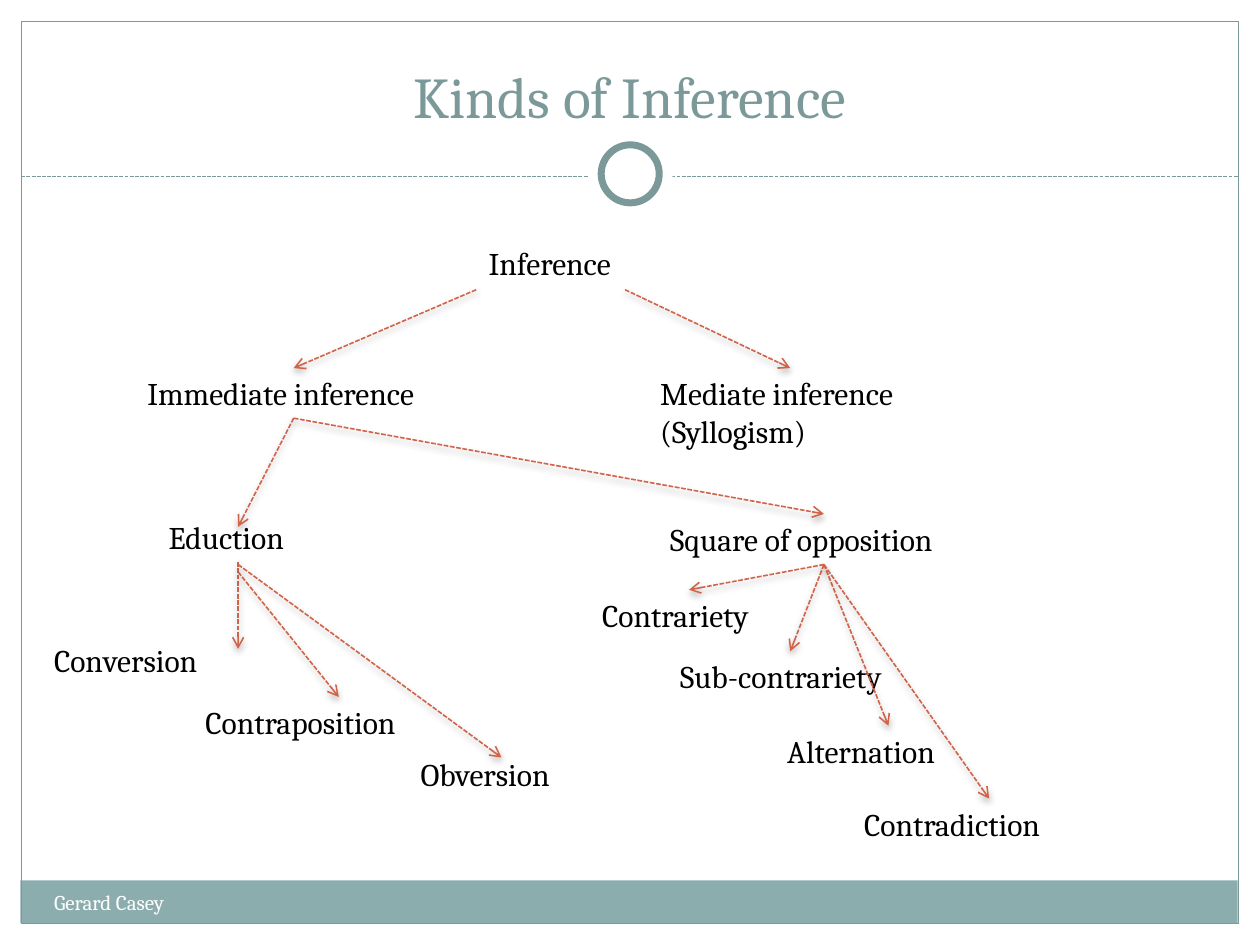
import dataclasses

import pptx
import pptx.dml.color
import pptx.enum.dml
import pptx.enum.shapes
import pptx.enum.text
import pptx.oxml
import pptx.oxml.ns
import pptx.util

Cm = pptx.util.Cm
Pt = pptx.util.Pt
RGBColor = pptx.dml.color.RGBColor
Shape = pptx.enum.shapes.MSO_SHAPE
Anchor = pptx.enum.text.MSO_ANCHOR
Align = pptx.enum.text.PP_ALIGN
AutoSize = pptx.enum.text.MSO_AUTO_SIZE

WHITE = RGBColor(0xFF, 0xFF, 0xFF)
BLACK = RGBColor(0x00, 0x00, 0x00)
TEAL = RGBColor(0x7C, 0x99, 0x9A)
BAND = RGBColor(0x8C, 0xAD, 0xAE)
RUST = RGBColor(0xD1, 0x63, 0x49)
FONT = "Cambria"
ROW = 1.02  # height of a one-line label, cm

NO_EFFECT = f'<a:effectLst {pptx.oxml.ns.nsdecls("a")}/>'
SOFT_SHADOW = (
    f'<a:effectLst {pptx.oxml.ns.nsdecls("a")}>'
    '<a:outerShdw blurRad="50800" dist="25400" dir="5400000" rotWithShape="0">'
    '<a:srgbClr val="000000"><a:alpha val="35000"/></a:srgbClr>'
    "</a:outerShdw></a:effectLst>"
)
ARROWHEAD = f'<a:tailEnd {pptx.oxml.ns.nsdecls("a")} type="arrow"/>'


@dataclasses.dataclass
class Label:
    text: str
    left: float
    top: float
    width: float
    height: float = ROW


@dataclasses.dataclass
class Decoration:
    kind: int
    left: float
    top: float
    width: float
    height: float
    fill: RGBColor | None = None
    line: RGBColor | None = None
    weight: float = 0.75


@dataclasses.dataclass
class Branch:
    start: tuple[float, float]
    end: tuple[float, float]


DECORATIONS_BELOW = [
    Decoration(Shape.RECTANGLE, 0.41, 17.75, 24.54, 0.86, fill=BAND),
    Decoration(Shape.RECTANGLE, 0.43, 0.43, 24.54, 18.19, line=TEAL),
]
RINGS = [
    Decoration(Shape.OVAL, 11.86, 2.67, 1.7, 1.7, fill=WHITE),
    Decoration(Shape.OVAL, 12.12, 2.92, 1.17, 1.17, WHITE, TEAL, 4),
]

LABELS = [
    Label("Inference", 9.6, 4.8, 6.02),
    Label("Immediate inference", 2.72, 7.42, 6.43),
    Label("Mediate inference (Syllogism)", 13.06, 7.42, 7.39, 1.8),
    Label("Eduction", 3.15, 10.31, 5.64),
    Label("Conversion", 0.84, 12.8, 5.99),
    Label("Contraposition", 3.89, 14.05, 5.92),
    Label("Obversion", 8.23, 15.09, 6.02),
    Label("Square of opposition", 13.26, 10.36, 6.71),
    Label("Contrariety", 11.89, 11.89, 4.04),
    Label("Sub-contrariety", 13.46, 13.13, 4.9),
    Label("Alternation", 15.62, 14.63, 4.62),
    Label("Contradiction", 17.17, 16.1, 5.54),
]

IMMEDIATE = (5.92, 8.43)
SQUARE = (16.61, 11.38)
BRANCHES = [
    Branch((9.6, 5.84), (5.92, 7.42)),
    Branch((12.6, 5.84), (15.93, 7.42)),
    Branch((4.8, 11.33), (4.8, 13.08)),
    Branch((4.8, 11.53), (6.83, 14.05)),
    Branch((4.8, 11.38), (10.11, 15.27)),
    *(Branch(IMMEDIATE, end) for end in [(4.8, 10.62), (16.61, 10.36)]),
    *(Branch(SQUARE, end) for end in
      [(13.89, 11.89), (15.93, 13.13), (17.91, 14.63), (19.94, 16.1)]),
]


def apply(target, values: dict) -> None:
    for name, value in values.items():
        setattr(target, name, value)


def write(box, text: str, size: float, color: RGBColor,
          frame_format: dict, align=Align.LEFT) -> None:
    frame = box.text_frame
    apply(frame, {"word_wrap": True, **frame_format})
    para = frame.paragraphs[0]
    para.alignment = align
    span = para.add_run()
    span.text = text
    apply(span.font, {"name": FONT, "size": Pt(size)})
    span.font.color.rgb = color


def add_label(page, label: Label, size: float = 18, color: RGBColor = BLACK,
              auto_size=AutoSize.SHAPE_TO_FIT_TEXT) -> None:
    box = page.shapes.add_textbox(Cm(label.left), Cm(label.top),
                                  Cm(label.width), Cm(label.height))
    write(box, label.text, size, color,
          {"vertical_anchor": Anchor.TOP, "auto_size": auto_size})


def add_decoration(page, item: Decoration) -> None:
    shape = page.shapes.add_shape(item.kind, Cm(item.left), Cm(item.top),
                                  Cm(item.width), Cm(item.height))
    shape.shadow.inherit = False
    if item.fill is None:
        shape.fill.background()
    else:
        shape.fill.solid()
        shape.fill.fore_color.rgb = item.fill
    if item.line is None:
        shape.line.fill.background()
    else:
        shape.line.color.rgb = item.line
        shape.line.width = Pt(item.weight)


def add_dashed_line(page, branch: Branch, color: RGBColor, weight: float,
                    effect: str):
    line = page.shapes.add_connector(
        pptx.enum.shapes.MSO_CONNECTOR.STRAIGHT,
        *(Cm(value) for value in branch.start + branch.end))
    line.line.color.rgb = color
    apply(line.line, {"width": Pt(weight),
                      "dash_style": pptx.enum.dml.MSO_LINE.SQUARE_DOT})
    line.element.spPr.append(pptx.oxml.parse_xml(effect))
    return line


def add_arrow(page, branch: Branch) -> None:
    arrow = add_dashed_line(page, branch, RUST, 0.9, SOFT_SHADOW)
    outline = arrow.element.spPr.find(pptx.oxml.ns.qn("a:ln"))
    outline.append(pptx.oxml.parse_xml(ARROWHEAD))


def main() -> None:
    deck = pptx.Presentation()
    apply(deck, {"slide_width": Cm(25.4), "slide_height": Cm(19.05)})
    page = deck.slides.add_slide(deck.slide_layouts[5])

    # Frame, footer band, divider and ring
    for item in DECORATIONS_BELOW:
        add_decoration(page, item)
    add_dashed_line(page, Branch((0.43, 3.56), (24.97, 3.56)), TEAL, 0.75,
                    NO_EFFECT)
    for item in RINGS:
        add_decoration(page, item)

    # Title and author
    title = page.shapes.title
    apply(title, {"left": Cm(0.84), "top": Cm(0.64),
                  "width": Cm(23.7), "height": Cm(2.11)})
    write(title, "Kinds of Inference", 33, TEAL,
          {"vertical_anchor": Anchor.BOTTOM, "auto_size": AutoSize.NONE},
          Align.CENTER)
    add_label(page, Label("Gerard Casey", 0.84, 17.81, 9.96), 12, WHITE,
              AutoSize.NONE)

    # Tree of inference kinds
    for label in LABELS:
        add_label(page, label)
    for branch in BRANCHES:
        add_arrow(page, branch)

    deck.save("out.pptx")


if __name__ == "__main__":
    main()
